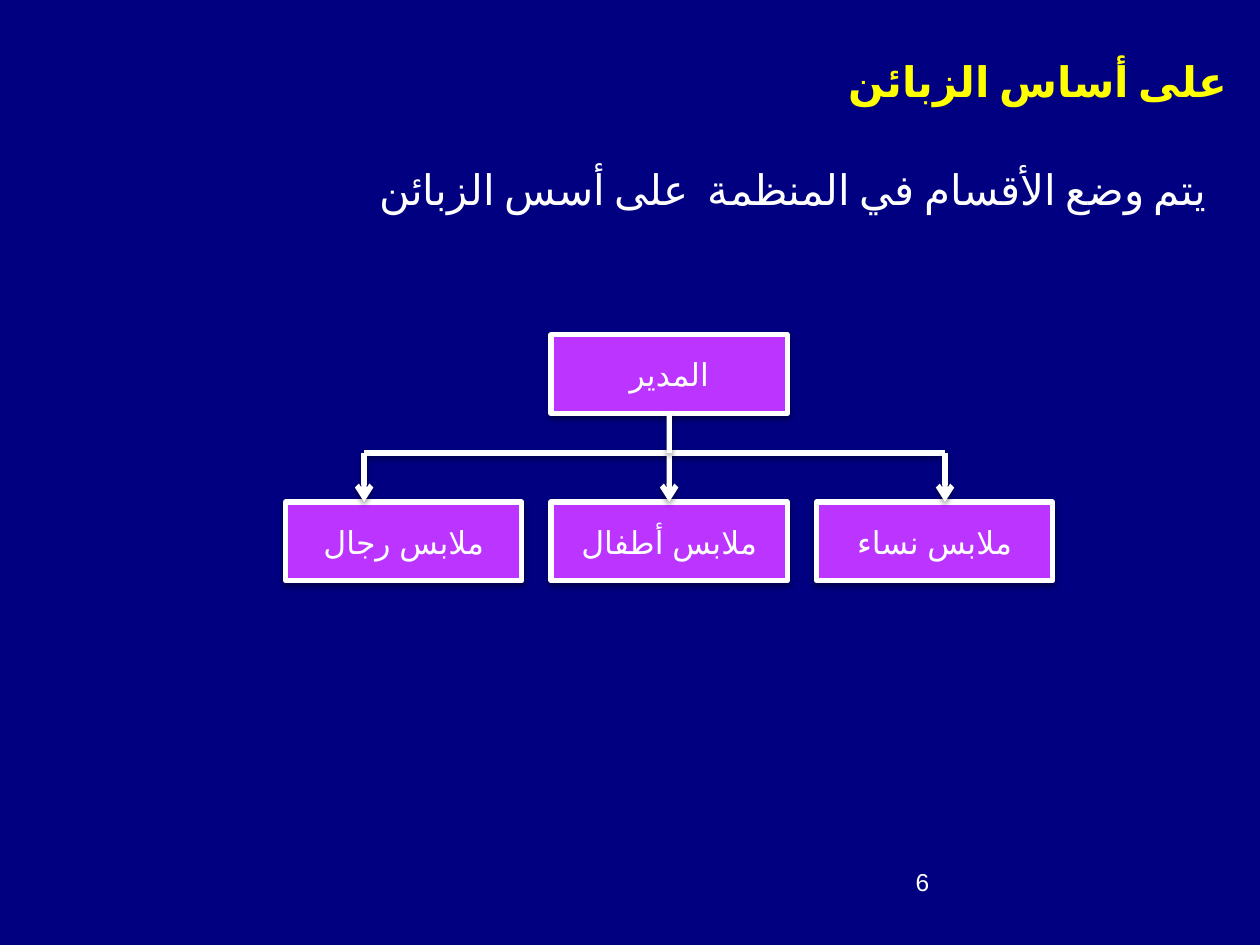
"""Build a slide with a customer-based organisation chart in Arabic."""
from lxml.etree import SubElement
from pptx import Presentation
from pptx.dml.color import RGBColor
from pptx.enum.lang import MSO_LANGUAGE_ID as LANG
from pptx.enum.shapes import MSO_CONNECTOR as CONN, MSO_SHAPE as SHAPE
from pptx.enum.text import MSO_ANCHOR as ANCHOR, PP_ALIGN as ALIGN
from pptx.oxml import parse_xml
from pptx.oxml.ns import nsdecls, qn
from pptx.util import Cm, Pt

NAVY = RGBColor(0x00, 0x00, 0x80)
PURPLE = RGBColor(0xBB, 0x34, 0xFF)
WHITE = RGBColor(0xFF, 0xFF, 0xFF)
YELLOW = RGBColor(0xFF, 0xFF, 0x00)

TITLE = "على أساس الزبائن"
INTRO = "يتم وضع الأقسام في المنظمة  على أسس الزبائن"
PAGE = "6"
MANAGER = "المدير"
DEPARTMENTS = ["ملابس رجال", "ملابس أطفال", "ملابس نساء"]

ARABIC = dict(language_id=LANG.ARABIC)
TITLE_FONT = dict(ARABIC, name="Arial Narrow", size=Pt(24), bold=True)
INTRO_FONT = dict(ARABIC, name="Arial Narrow", size=Pt(24))
BOX_FONT = dict(ARABIC, name="Arial", size=Pt(18))
PAGE_FONT = dict(name="Arial", size=Pt(14))

BOX_W, BOX_H, PITCH = 4.76, 1.59, 5.35
LEFT, MANAGER_TOP, DEPT_TOP = 5.76, 6.75, 10.12
BAR_Y = 9.13
MIDDLE = LEFT + PITCH + BOX_W / 2
BAR_LEFT, BAR_RIGHT = 7.34, 19.05

SHADOW = (
    f'<a:effectLst {nsdecls("a")}><a:outerShdw blurRad="{Pt(3.1)}" dist="{Pt(1.6)}" '
    'dir="5400000" rotWithShape="0"><a:srgbClr val="000000"><a:alpha val="38000"/>'
    "</a:srgbClr></a:outerShdw></a:effectLst>"
)


def write(sp, text, font, color=WHITE, align=ALIGN.RIGHT, anchor=ANCHOR.TOP, rtl=True):
    tf = sp.text_frame
    tf.word_wrap = True
    tf.vertical_anchor = anchor
    p = tf.paragraphs[0]
    p.alignment = align
    if rtl:
        p._p.get_or_add_pPr().set("rtl", "1")
    r = p.add_run()
    r.text = text
    for key, value in font.items():
        setattr(r.font, key, value)
    r.font.color.rgb = color
    SubElement(r._r.get_or_add_rPr(), qn("a:cs"), typeface=font["name"])


def outline(sp):
    sp.line.color.rgb = WHITE
    sp.line.width = Pt(3)
    sp._element.spPr.append(parse_xml(SHADOW))


def add_box(s, text, left, top):
    sp = s.shapes.add_shape(SHAPE.RECTANGLE, Cm(left), Cm(top), Cm(BOX_W), Cm(BOX_H))
    sp.fill.solid()
    sp.fill.fore_color.rgb = PURPLE
    outline(sp)
    write(sp, text, BOX_FONT, align=ALIGN.CENTER, anchor=ANCHOR.MIDDLE)
    return sp


def add_line(s, x1, y1, x2, y2, arrow=False):
    line = s.shapes.add_connector(CONN.STRAIGHT, Cm(x1), Cm(y1), Cm(x2), Cm(y2))
    outline(line)
    if arrow:
        SubElement(line.line._get_or_add_ln(), qn("a:tailEnd"), type="arrow")
    return line


def place(sp, left, top, width, height):
    sp.left, sp.top, sp.width, sp.height = Cm(left), Cm(top), Cm(width), Cm(height)


def main():
    prs = Presentation()
    prs.slide_width, prs.slide_height = Cm(25.4), Cm(19.05)
    s = prs.slides.add_slide(prs.slide_layouts[5])
    s.background.fill.solid()
    s.background.fill.fore_color.rgb = NAVY

    title = s.shapes.title
    place(title, 16.46, 1, 8.53, 1.3)
    write(title, TITLE, TITLE_FONT, YELLOW)

    manager = add_box(s, MANAGER, LEFT + PITCH, MANAGER_TOP)
    depts = [add_box(s, name, LEFT + i * PITCH, DEPT_TOP)
             for i, name in enumerate(DEPARTMENTS)]

    add_line(s, BAR_LEFT, BAR_Y, BAR_RIGHT, BAR_Y)
    arrows = [add_line(s, x, BAR_Y, x, DEPT_TOP, arrow=True)
              for x in (BAR_LEFT, MIDDLE, BAR_RIGHT)]
    arrows[1].end_connect(depts[1], 0)
    stem = add_line(s, MIDDLE, MANAGER_TOP + BOX_H, MIDDLE, BAR_Y)
    stem.begin_connect(manager, 2)

    intro = s.shapes.add_textbox(Cm(5.94), Cm(3.18), Cm(18.64), Cm(1.3))
    write(intro, INTRO, INTRO_FONT)
    page = s.shapes.add_textbox(Cm(18.21), Cm(17.35), Cm(5.92), Cm(1.32))
    write(page, PAGE, PAGE_FONT, align=ALIGN.LEFT, rtl=False)

    prs.save("out.pptx")


if __name__ == "__main__":
    main()
